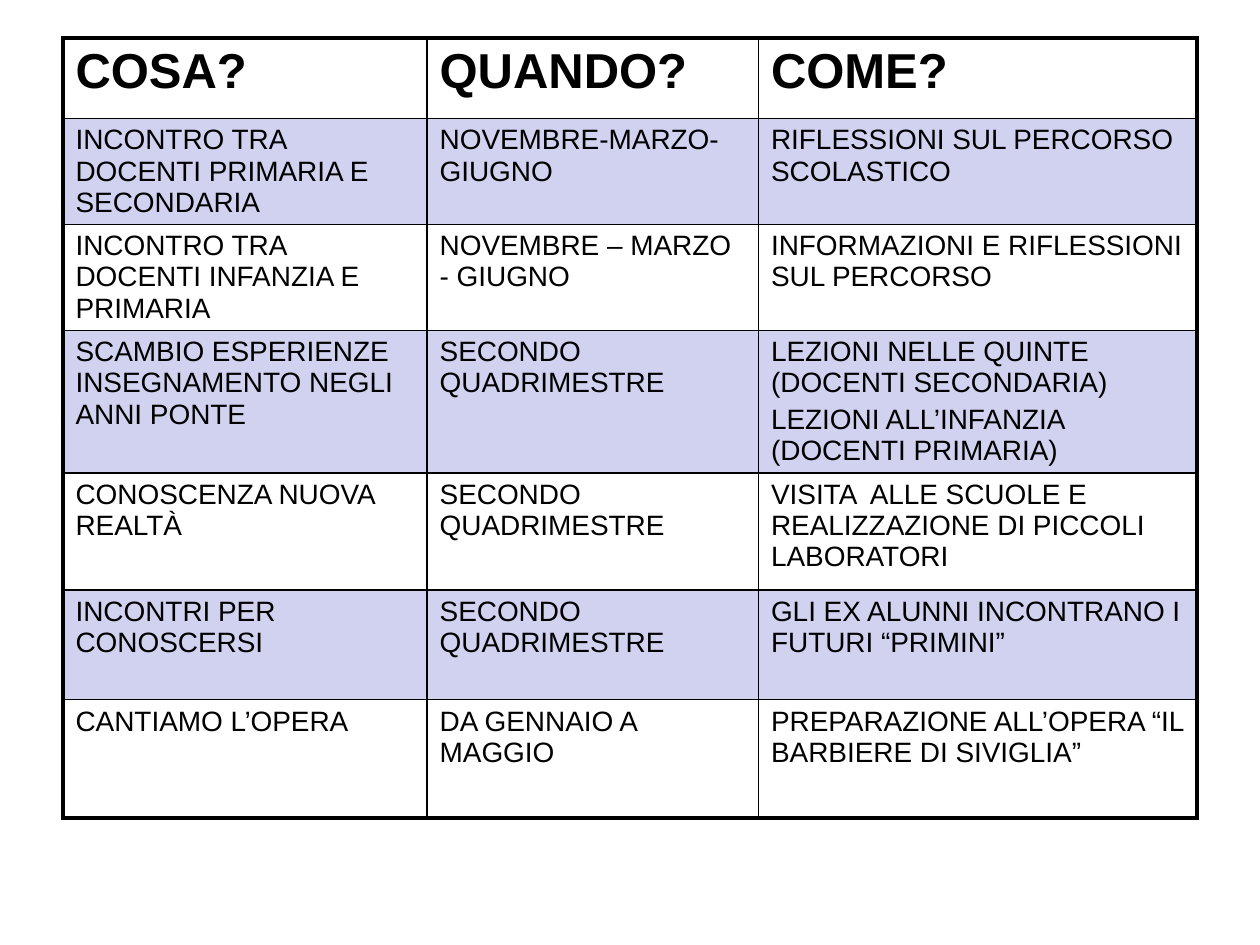
from lxml.etree import SubElement
from pptx import Presentation
from pptx.dml.color import RGBColor
from pptx.oxml.ns import qn
from pptx.util import Inches, Pt

BLACK = RGBColor(0x00, 0x00, 0x00)
LAVENDER = RGBColor(0xD1, 0xD1, 0xF0)
FONT = "Arial"
OUTER, INNER = Pt(2.25), Pt(1)

COLUMN_WIDTHS = [2.89, 2.63, 3.48]
ROW_HEIGHTS = [0.64, 0.65, 0.55, 0.82, 0.93, 0.87, 0.94]
ACTIVITIES = [
    ("COSA?", "QUANDO?", "COME?"),
    ("INCONTRO TRA DOCENTI PRIMARIA E SECONDARIA",
     "NOVEMBRE-MARZO-GIUGNO",
     "RIFLESSIONI SUL PERCORSO SCOLASTICO"),
    ("INCONTRO TRA DOCENTI INFANZIA E PRIMARIA",
     "NOVEMBRE – MARZO - GIUGNO",
     "INFORMAZIONI E RIFLESSIONI SUL PERCORSO"),
    ("SCAMBIO ESPERIENZE INSEGNAMENTO NEGLI ANNI PONTE",
     "SECONDO QUADRIMESTRE",
     "LEZIONI NELLE QUINTE (DOCENTI SECONDARIA)\n"
     "LEZIONI ALL’INFANZIA (DOCENTI PRIMARIA)"),
    ("CONOSCENZA NUOVA REALTÀ",
     "SECONDO QUADRIMESTRE",
     "VISITA  ALLE SCUOLE E REALIZZAZIONE DI PICCOLI LABORATORI"),
    ("INCONTRI PER CONOSCERSI",
     "SECONDO QUADRIMESTRE",
     "GLI EX ALUNNI INCONTRANO I FUTURI “PRIMINI”"),
    ("CANTIAMO L’OPERA",
     "DA GENNAIO A MAGGIO",
     "PREPARAZIONE ALL’OPERA “IL BARBIERE DI SIVIGLIA”"),
]


def set_borders(cell, outer_sides):
    properties = cell._tc.get_or_add_tcPr()
    for side, is_outer in outer_sides.items():
        border = SubElement(properties, qn(f"a:ln{side}"),
                            w=str(OUTER if is_outer else INNER))
        border_fill = SubElement(border, qn("a:solidFill"))
        SubElement(border_fill, qn("a:srgbClr"), val=str(BLACK))


def write_text(cell, text, is_header):
    cell.text_frame.text = text
    for paragraph in cell.text_frame.paragraphs:
        spacing = SubElement(paragraph._p.get_or_add_pPr(), qn("a:spcBef"))
        SubElement(spacing, qn("a:spcPct"), val="20000")
        for run in paragraph.runs:
            run.font.name = FONT
            run.font.size = Pt(28 if is_header else 16)
            run.font.bold = is_header
            run.font.color.rgb = BLACK


def add_activity_table(slide, left, top, width, height):
    last_row, last_column = len(ROW_HEIGHTS) - 1, len(COLUMN_WIDTHS) - 1
    frame = slide.shapes.add_table(last_row + 1, last_column + 1,
                                   left, top, width, height)
    table = frame.table
    table.first_row = table.horz_banding = False
    for column, share in zip(table.columns, COLUMN_WIDTHS):
        column.width = int(width * share / sum(COLUMN_WIDTHS))
    for row, row_height in zip(table.rows, ROW_HEIGHTS):
        row.height = Inches(row_height)
    frame.height = height

    for r, activity in enumerate(ACTIVITIES):
        for c, text in enumerate(activity):
            cell = table.cell(r, c)
            write_text(cell, text, is_header=r == 0)
            set_borders(cell, {"L": c == 0, "R": c == last_column,
                               "T": r == 0, "B": r == last_row})
            if r % 2:
                cell.fill.solid()
                cell.fill.fore_color.rgb = LAVENDER
            else:
                cell.fill.background()


def main():
    presentation = Presentation()
    presentation.slide_width, presentation.slide_height = Inches(10), Inches(7.5)
    slide = presentation.slides.add_slide(presentation.slide_layouts[6])
    slide_width, slide_height = presentation.slide_width, presentation.slide_height
    add_activity_table(slide, int(slide_width * 0.05), int(slide_height * 0.04),
                       int(slide_width * 0.9), Inches(6.4))
    presentation.save("out.pptx")


if __name__ == "__main__":
    main()
